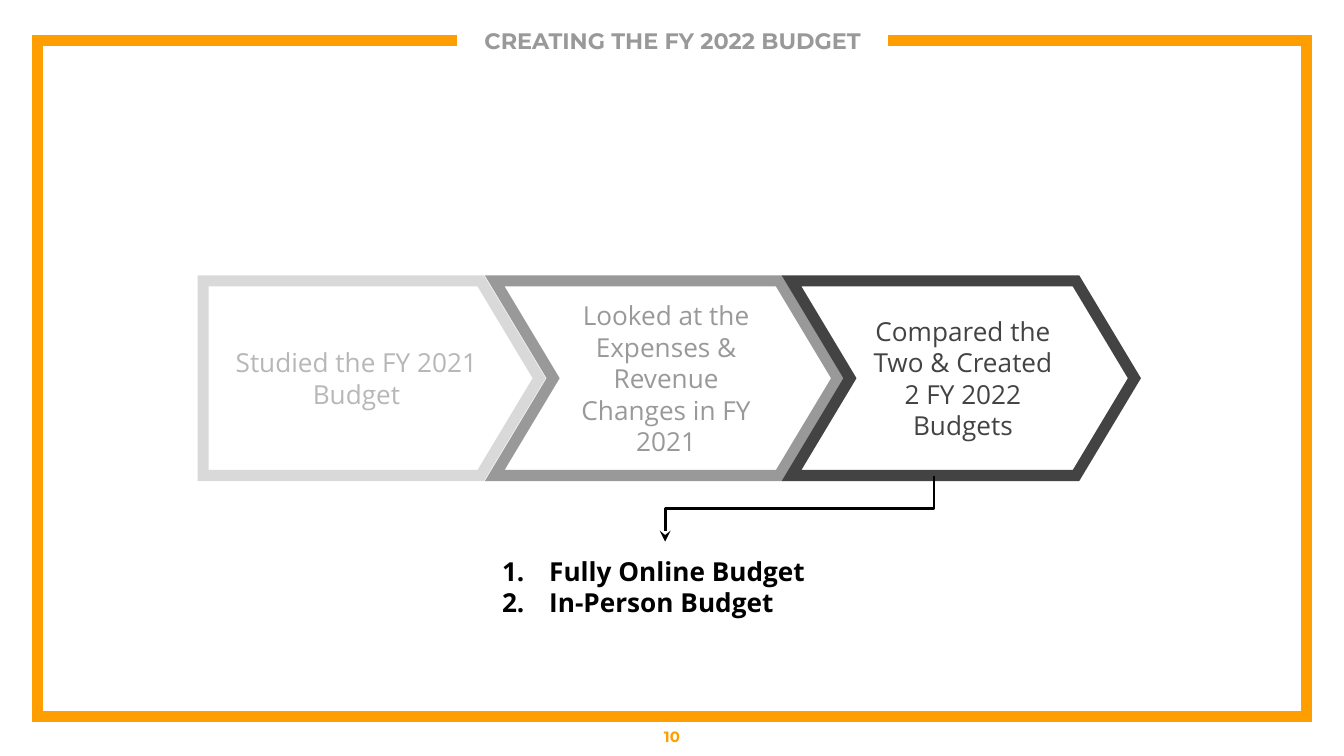
import pptx
import pptx.util
import pptx.dml.color
import pptx.enum.shapes
import pptx.enum.text
import pptx.oxml
import pptx.oxml.ns
from lxml import etree

Cm, Pt = pptx.util.Cm, pptx.util.Pt
RGBColor = pptx.dml.color.RGBColor
Shape = pptx.enum.shapes.MSO_SHAPE
Align = pptx.enum.text.PP_ALIGN
Anchor = pptx.enum.text.MSO_ANCHOR
qn = pptx.oxml.ns.qn

ORANGE = RGBColor(0xFF, 0x9E, 0x00)
BLACK = RGBColor(0, 0, 0)
LIGHT = RGBColor(0xD9, 0xD9, 0xD9)
SILVER = RGBColor(0xB7, 0xB7, 0xB7)
GREY = RGBColor(0x99, 0x99, 0x99)
DARK = RGBColor(0x43, 0x43, 0x43)
HEADING_FONT, BODY_FONT = "Montserrat", "Open Sans"

# Content
TITLE = "CREATING THE FY 2022 BUDGET"
PAGE_NUMBER = "10"
# text, preset shape, left, width, outline colour, text colour
STEPS = [
    ("Studied the FY 2021 Budget", Shape.PENTAGON, 3.84, 6.35, LIGHT, SILVER),
    ("Looked at the Expenses & Revenue Changes in FY 2021", Shape.CHEVRON,
     9.35, 6.48, GREY, GREY),
    ("Compared the Two & Created 2 FY 2022 Budgets", Shape.CHEVRON,
     14.96, 6.48, DARK, DARK),
]
BUDGETS = ["Fully Online Budget", "In-Person Budget"]

# Layout in centimetres
STEP_TOP, STEP_HEIGHT = 5.31, 3.68
FRAME = [(8.64, 0.76), (0.71, 0.76), (0.71, 13.54),
         (24.69, 13.54), (24.69, 0.76), (16.79, 0.76)]
ARROW_START = (17.65, STEP_TOP + STEP_HEIGHT)
ARROW_END = (12.57, 10.24)


def add_run(paragraph, text, font, size, color, bold=False):
    run = paragraph.add_run()
    run.text = text
    run.font.name, run.font.size, run.font.bold = font, Pt(size), bold
    run.font.color.rgb = color


def set_frame(shape, anchor, inset=0.25):
    frame = shape.text_frame
    frame.word_wrap = True
    frame.auto_size = pptx.enum.text.MSO_AUTO_SIZE.NONE
    frame.vertical_anchor = anchor
    frame.margin_left = frame.margin_right = Cm(inset)
    frame.margin_top = frame.margin_bottom = Cm(inset)
    return frame


def add_text_box(left, top, width, height, anchor):
    box = slide.shapes.add_textbox(Cm(left), Cm(top), Cm(width), Cm(height))
    return set_frame(box, anchor)


def outline(shape, color):
    shape.shadow.inherit = False
    shape.fill.background()
    shape.line.color.rgb = color
    shape.line.width = Pt(6)
    etree.SubElement(shape.line._get_or_add_ln(), qn("a:miter"), lim="800000")


presentation = pptx.Presentation()
presentation.slide_width, presentation.slide_height = Cm(25.4), Cm(14.29)
slide = presentation.slides.add_slide(presentation.slide_layouts[5])

# Open border frame, placed behind the title
points = [(Cm(x), Cm(y)) for x, y in FRAME]
builder = slide.shapes.build_freeform(*points[0])
builder.add_line_segments(points[1:], close=False)
border = builder.convert_to_shape()
outline(border, ORANGE)
title = slide.shapes.title
title._element.addprevious(border._element)

# Title
title.left, title.top, title.width, title.height = Cm(9.02), Cm(0.28), Cm(7.39), Cm(0.99)
paragraph = set_frame(title, Anchor.MIDDLE, 0).paragraphs[0]
paragraph.alignment = Align.CENTER
add_run(paragraph, TITLE, HEADING_FONT, 12, GREY, True)

# Process steps
for text, preset, left, width, line_color, text_color in STEPS:
    step = slide.shapes.add_shape(preset, Cm(left), Cm(STEP_TOP), Cm(width), Cm(STEP_HEIGHT))
    step.adjustments[0] = 0.3
    outline(step, line_color)
    paragraph = set_frame(step, Anchor.MIDDLE).paragraphs[0]
    paragraph.alignment = Align.CENTER
    add_run(paragraph, text, BODY_FONT, 14, text_color)

# Page number
paragraph = add_text_box(0, 13.54, 25.4, 0.76, Anchor.MIDDLE).paragraphs[0]
paragraph.alignment = Align.CENTER
add_run(paragraph, PAGE_NUMBER, HEADING_FONT, 8, ORANGE, True)

# Numbered budgets
frame = add_text_box(8.86, 10.24, 7.42, 2.06, Anchor.TOP)
for index, text in enumerate(BUDGETS):
    paragraph = frame.add_paragraph() if index else frame.paragraphs[0]
    paragraph.space_before = Pt(0 if index else 6)
    properties = paragraph._p.get_or_add_pPr()
    properties.set("marL", str(Cm(1.27)))
    properties.set("indent", str(-Cm(0.89)))
    bullet_color = etree.SubElement(properties, qn("a:buClr"))
    etree.SubElement(bullet_color, qn("a:srgbClr"), val=str(BLACK))
    etree.SubElement(properties, qn("a:buFont"), typeface=BODY_FONT)
    etree.SubElement(properties, qn("a:buAutoNum"), type="arabicPeriod")
    add_run(paragraph, text, BODY_FONT, 14, BLACK, True)

# Elbow arrow, turned a quarter so that it leaves the step downwards
(start_x, start_y), (end_x, end_y) = ARROW_START, ARROW_END
length, span = end_y - start_y, start_x - end_x
left = (start_x + end_x - length) / 2
top = (start_y + end_y - span) / 2
arrow = slide.shapes.add_connector(
    pptx.enum.shapes.MSO_CONNECTOR.ELBOW,
    Cm(left), Cm(top), Cm(left + length), Cm(top + span))
arrow._element.spPr.find(qn("a:xfrm")).set("rot", str(90 * 60000))
arrow.line.color.rgb = BLACK
arrow.line.width = Pt(1.5)
etree.SubElement(arrow.line._get_or_add_ln(), qn("a:tailEnd"), type="stealth")
etree.SubElement(arrow._element.spPr, qn("a:effectLst"))

presentation.save("out.pptx")
